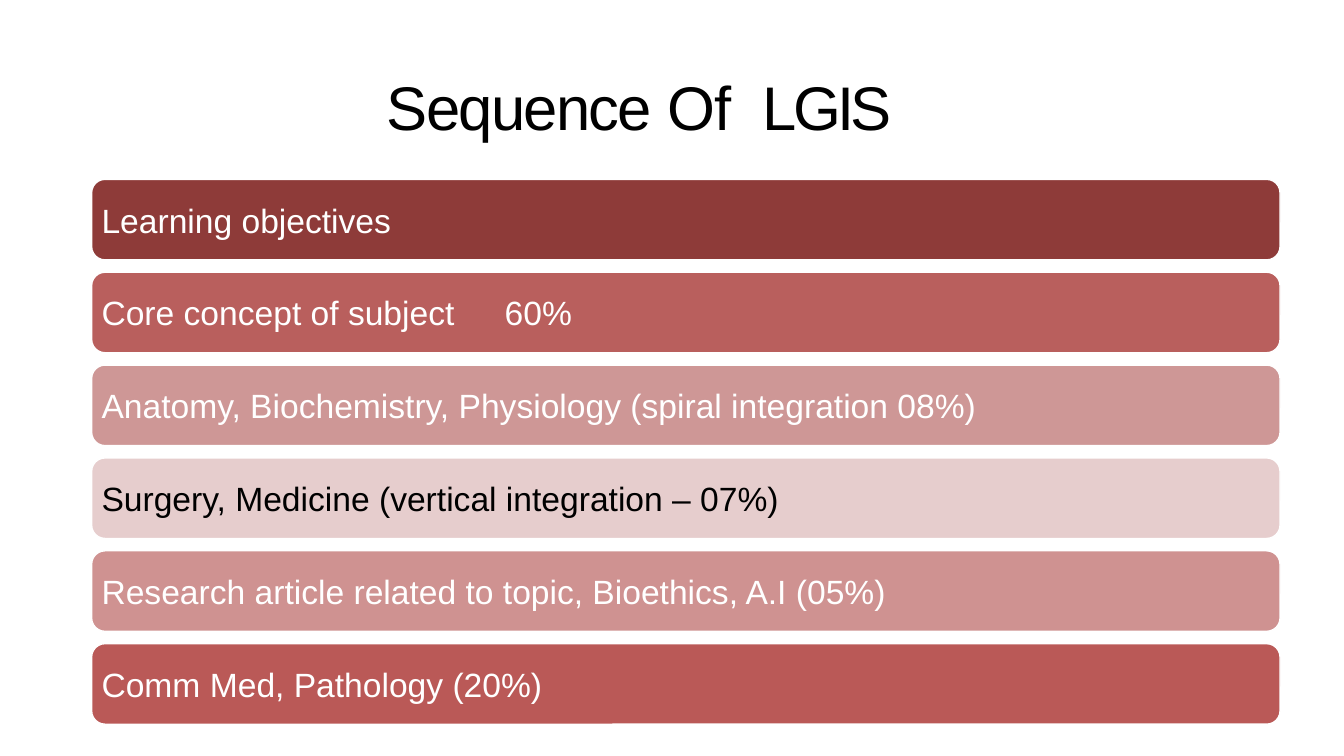
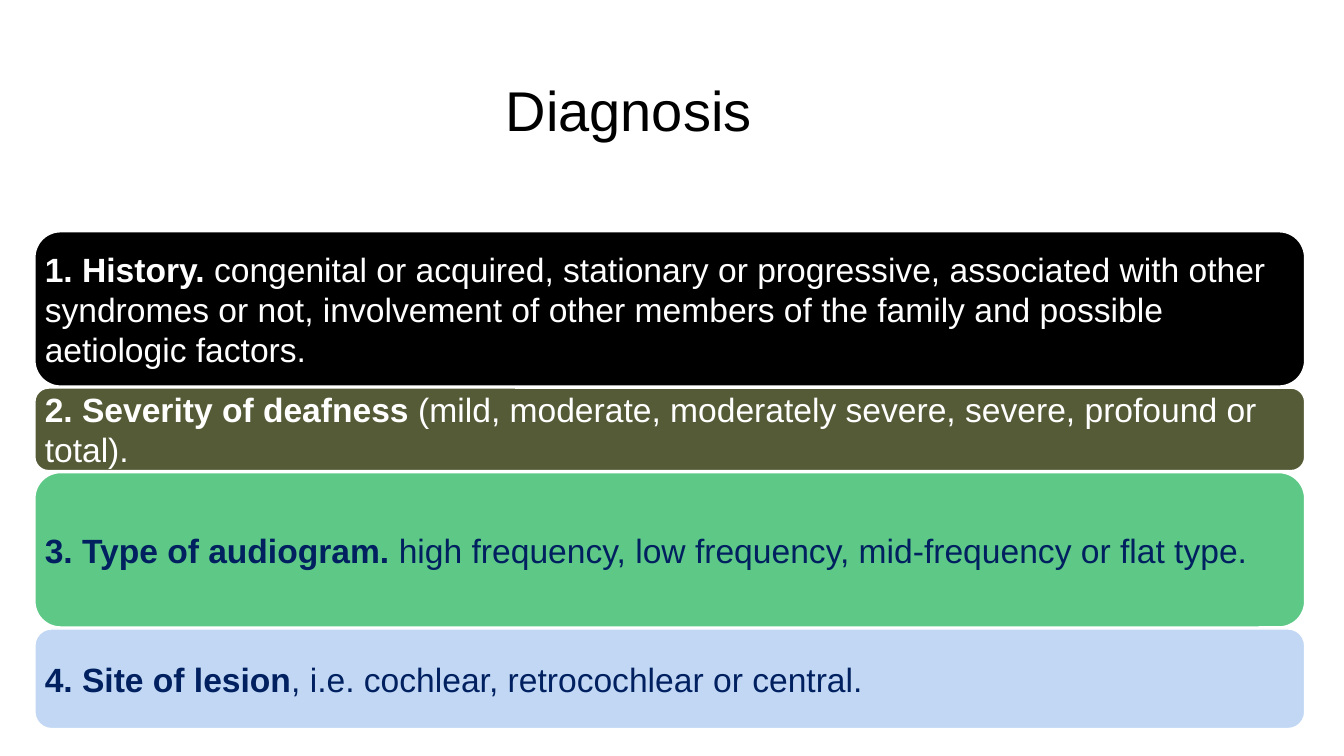
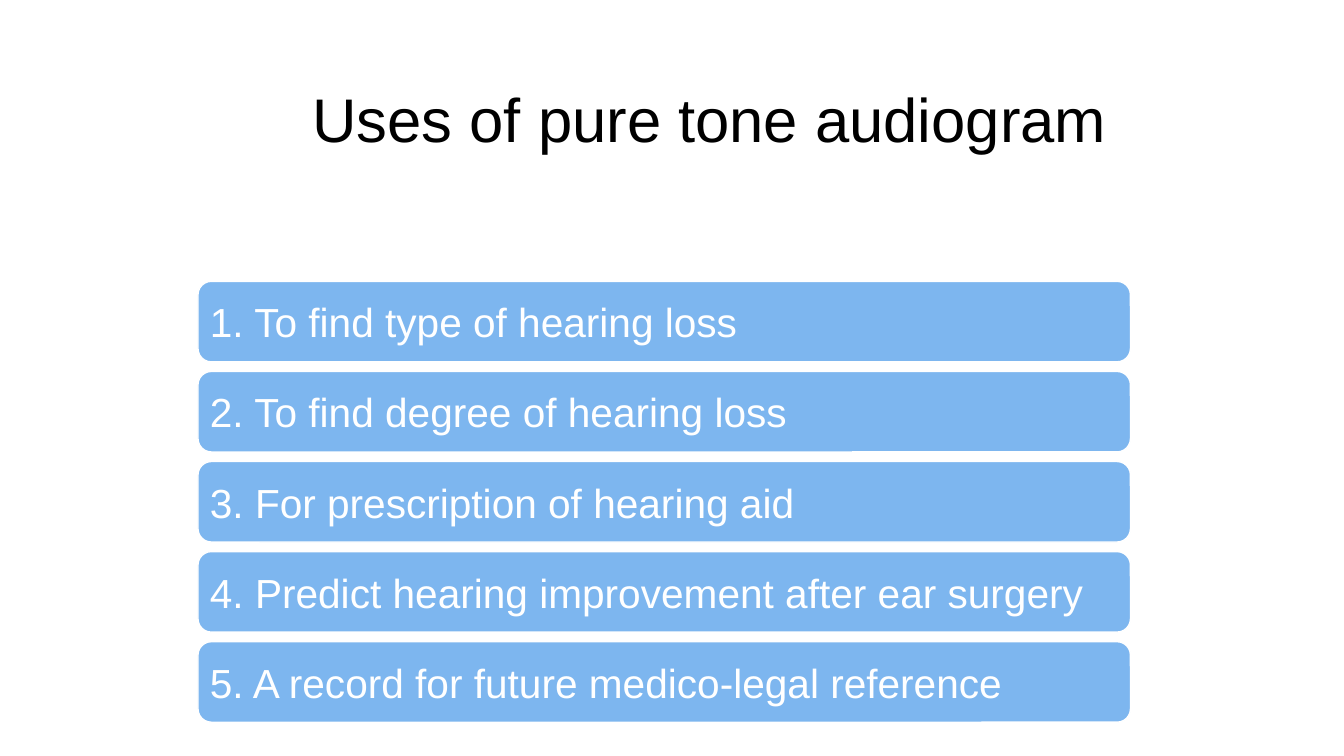
"""Build three lecture slides, each a title over a stack of rounded bars."""
from pptx import Presentation
from pptx.dml.color import RGBColor
from pptx.enum.shapes import MSO_SHAPE
from pptx.enum.text import MSO_ANCHOR, PP_ALIGN
from pptx.util import Cm, Pt

ROUND = MSO_SHAPE.ROUNDED_RECTANGLE
TOP, MIDDLE = MSO_ANCHOR.TOP, MSO_ANCHOR.MIDDLE
LEFT, CENTER = PP_ALIGN.LEFT, PP_ALIGN.CENTER
FONT, WHITE, BLACK, NAVY, SKY = "Arial", "FFFFFF", "000000", "002060", "7DB6EF"
CORNER = 0.16667
INSET = 0.29289

USES = [
    "1. To find type of hearing loss",
    "2. To find degree of hearing loss",
    "3. For prescription of hearing aid",
    "4. Predict hearing improvement after ear surgery",
    "5. A record for future medico-legal reference",
]

SLIDES = [
    {
        "title": [("Sequence ", {"track": -1.3}), ("Of ", {"track": -0.1}),
                  (" LGIS", {"track": -2.6})],
        "box": (9.09, 1.7, 14.05, 2.16),
        "style": {"size": 44, "anchor": TOP, "pads": (0.18, 0.03, 0.18, 0.1)},
        "stack": {"left": 2.31, "top": 4.52, "width": 29.95, "gap": 0.31,
                  "size": 24, "pad": 0.25},
        "bars": [
            (2.03, "8E3B39", WHITE, [("Learning objectives", {})]),
            (2.03, "B95F5D", WHITE, [("Core concept of subject\t60%", {})]),
            (2.03, "CE9796", WHITE,
             [("Anatomy, Biochemistry, Physiology (spiral integration 08%)", {})]),
            (2.03, "E6CDCD", BLACK,
             [("Surgery, Medicine (vertical integration – 07%)", {})]),
            (2.03, "CF9291", WHITE,
             [("Research article related to topic, Bioethics, A.I (05%)", {})]),
            (2.03, "BA5957", WHITE, [("Comm Med, Pathology (20%)", {})]),
        ],
    },
    {
        "title": [("Diagnosis", {})],
        "box": (6.99, 1.47, 17.7, 2.54),
        "style": {"size": 40},
        "stack": {"left": 0.88, "top": 5.84, "width": 32, "gap": 0.05,
                  "size": 24, "pad": 0.25},
        "bars": [
            (3.89, BLACK, WHITE, [
                ("1. History. ", {"bold": True}),
                ("congenital or acquired, stationary or progressive, associated "
                 "with other syndromes or not, involvement of other members of "
                 "the family and possible aetiologic factors.", {})]),
            (2.08, "555B37", WHITE, [
                ("2. Severity of deafness ", {"bold": True}),
                ("(mild, moderate, moderately severe, severe, profound or "
                 "total).", {})]),
            (3.89, "5EC986", NAVY, [
                ("3. Type of audiogram. ", {"bold": True}),
                ("high frequency, low frequency, mid-frequency or flat type.", {})]),
            (2.51, "C1D7F4", NAVY, [
                ("4. Site of lesion", {"bold": True}),
                (", i.e. cochlear, retrocochlear or central.", {})]),
        ],
    },
    {
        "title": [("Uses of pure tone audiogram", {})],
        "box": (5.61, 1.83, 24.56, 2.26),
        "style": {"size": 44},
        "stack": {"left": 4.99, "top": 7.09, "width": 23.5, "gap": 0.24,
                  "size": 29, "pad": 0.3},
        "bars": [(2.03, SKY, WHITE, [(use, {})]) for use in USES],
    },
]


def paint(color, code):
    color.rgb = RGBColor.from_string(code)


def write(shape, runs, size, color=BLACK, align=CENTER, anchor=MIDDLE,
          pads=(0.25, 0.13, 0.25, 0.13)):
    frame = shape.text_frame
    frame.word_wrap = True
    frame.vertical_anchor = anchor
    (frame.margin_left, frame.margin_top,
     frame.margin_right, frame.margin_bottom) = map(Cm, pads)
    para = frame.paragraphs[0]
    para.alignment = align
    for text, form in runs:
        run = para.add_run()
        run.text = text
        font = run.font
        font.name, font.size = FONT, Pt(size)
        font.bold = form.get("bold", False)
        paint(font.color, color)
        if "track" in form:
            run._r.get_or_add_rPr().set("spc", str(round(form["track"] * 100)))


def stack(slide, bars, left, top, width, gap, size, pad):
    for high, fill, color, runs in bars:
        bar = slide.shapes.add_shape(ROUND, Cm(left), Cm(top), Cm(width), Cm(high))
        bar.shadow.inherit = False
        bar.fill.solid()
        paint(bar.fill.fore_color, fill)
        paint(bar.line.color, WHITE)
        bar.line.width = Pt(1)
        side = max(0, pad - high * CORNER * INSET)
        write(bar, runs, size, color=color, align=LEFT, pads=(side, 0, side, 0))
        top += high + gap


def main():
    deck = Presentation()
    deck.slide_width, deck.slide_height = Cm(33.87), Cm(19.05)
    for page in SLIDES:
        slide = deck.slides.add_slide(deck.slide_layouts[6])
        title = slide.shapes.add_textbox(*map(Cm, page["box"]))
        write(title, page["title"], **page["style"])
        stack(slide, page["bars"], **page["stack"])
    deck.save("out.pptx")


if __name__ == "__main__":
    main()
